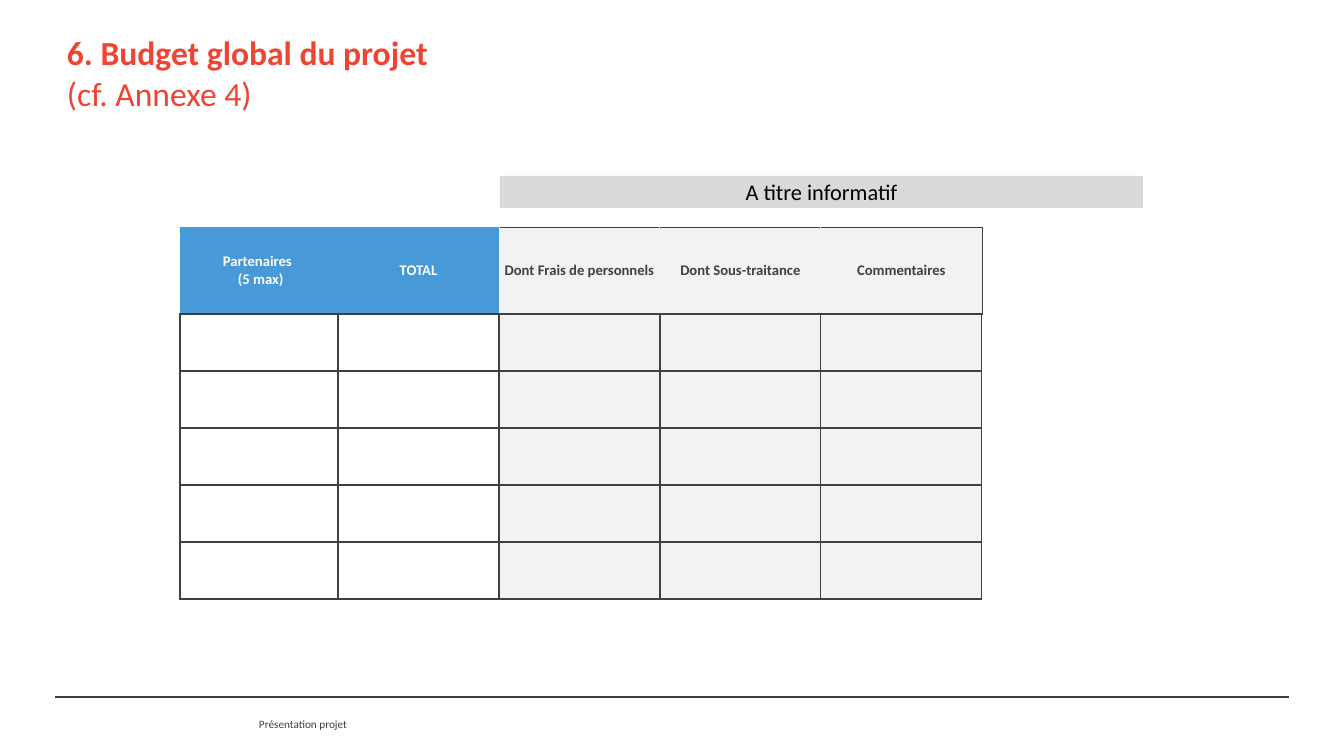
from lxml.etree import SubElement
from pptx import Presentation
from pptx.dml.color import RGBColor
from pptx.enum.shapes import MSO_CONNECTOR as Link, MSO_SHAPE as Preset
from pptx.enum.text import MSO_ANCHOR as Anchor, MSO_AUTO_SIZE as Fit, PP_ALIGN as Align
from pptx.oxml.ns import qn
from pptx.util import Emu, Pt

COLORS = {"red": "EF4333", "blue": "4799D7", "pale": "F2F2F2", "band": "D9D9D9",
          "dark": "404040", "white": "FFFFFF", "black": "000000"}


def px(n):
    return Emu(round(n * 914400 / 100.8))


class BudgetSlide:
    """Draws the elements of one slide in a shared style."""

    font = "Calibri"

    def __init__(self, deck):
        self.slide = deck.slides.add_slide(deck.slide_layouts[5])
        self.shapes = self.slide.shapes

    def color(self, name):
        return RGBColor.from_string(COLORS[name])

    def paint(self, target, name):
        target.fill.solid()
        target.fill.fore_color.rgb = self.color(name)

    def style(self, font, size, color, bold=False):
        for key, value in {"name": self.font, "size": Pt(size), "bold": bold}.items():
            setattr(font, key, value)
        font.color.rgb = self.color(color)

    def frame(self, frame, **values):
        for key, value in values.items():
            setattr(frame, key, value)

    def title(self, heading, reference, box):
        holder = self.shapes.title
        holder.left, holder.top, holder.width, holder.height = map(px, box)
        self.frame(holder.text_frame, margin_left=0, margin_right=0, word_wrap=True,
                   auto_size=Fit.NONE, vertical_anchor=Anchor.MIDDLE)
        line = holder.text_frame.paragraphs[0]
        line.alignment = Align.LEFT
        self.style(line.font, 24, "red")
        for text, bold in ((heading, True), (reference, False)):
            if not bold:
                line.add_line_break()
            run = line.add_run()
            run.text = text
            self.style(run.font, 24, "red", bold)

    def footer(self, text, box):
        frame = self.shapes.add_textbox(*map(px, box)).text_frame
        self.frame(frame, text=text, margin_left=0, margin_right=0, margin_top=0,
                   margin_bottom=0, word_wrap=False, auto_size=Fit.SHAPE_TO_FIT_TEXT)
        self.style(frame.paragraphs[0].font, 8, "dark")

    def rule(self, left, right, y):
        rule = self.shapes.add_connector(Link.STRAIGHT, px(left), px(y), px(right), px(y))
        rule.line.color.rgb = self.color("dark")
        rule.line.width = Pt(1.5)
        SubElement(rule.element.spPr, qn("a:effectLst"))

    def band(self, text, box):
        band = self.shapes.add_shape(Preset.RECTANGLE, *map(px, box))
        band.shadow.inherit = False
        self.paint(band, "band")
        band.line.fill.background()
        self.frame(band.text_frame, text=text, word_wrap=True, vertical_anchor=Anchor.MIDDLE)
        label = band.text_frame.paragraphs[0]
        label.alignment = Align.CENTER
        self.style(label.font, 16, "black")

    def borders(self, cell, sides):
        props = cell._tc.get_or_add_tcPr()
        for side in "LRTB":
            name, width = sides.get(side, ("dark", 1))
            line = SubElement(props, qn(f"a:ln{side}"), w=str(Pt(width)))
            fill = SubElement(line, qn("a:solidFill"))
            SubElement(fill, qn("a:srgbClr"), val=COLORS[name])

    def header(self, cell, text, fill, last):
        edge = (fill, 0.75)
        outer = ("dark", 0.5)
        self.borders(cell, {"L": edge, "R": outer if last else edge,
                            "T": edge if fill == "blue" else outer})
        self.frame(cell, text=text, margin_left=0, margin_right=0, margin_top=0,
                   margin_bottom=0, vertical_anchor=Anchor.MIDDLE)
        label = cell.text_frame.paragraphs[0]
        label.alignment = Align.CENTER
        self.style(label.font, 10.5, "white" if fill == "blue" else "dark", True)
        self.paint(cell, fill)

    def budget(self, headings, left, top, widths, heights):
        budget = self.shapes.add_table(len(heights), len(widths), px(left), px(top),
                                       px(sum(widths)), px(sum(heights))).table
        self.frame(budget, first_row=False, horz_banding=False)
        for column, width in zip(budget.columns, widths):
            column.width = px(width)
        for r, height in enumerate(heights):
            budget.rows[r].height = px(height)
            for c, heading in enumerate(headings):
                cell = budget.cell(r, c)
                if r == 0:
                    self.header(cell, heading, "blue" if c < 2 else "pale",
                                c == len(headings) - 1)
                else:
                    self.borders(cell, {})
                    self.paint(cell, "white" if c < 2 else "pale")


def main():
    deck = Presentation()
    deck.slide_width, deck.slide_height = px(1344), px(756)
    page = BudgetSlide(deck)
    page.footer("Présentation projet", (259, 717, 89, 13))
    page.rule(55, 1289, 697)
    page.title("6. Budget global du projet", "(cf. Annexe 4)", (67, 30, 1210, 85))
    page.budget(("Partenaires \v (5 max)", "TOTAL", "Dont Frais de personnels",
                 "Dont Sous-traitance", "Commentaires"),
                180, 227, [158] + [161] * 4, [87] + [57] * 5)
    page.band("A titre informatif", (500, 176, 643, 32))
    deck.save("out.pptx")


if __name__ == "__main__":
    main()
